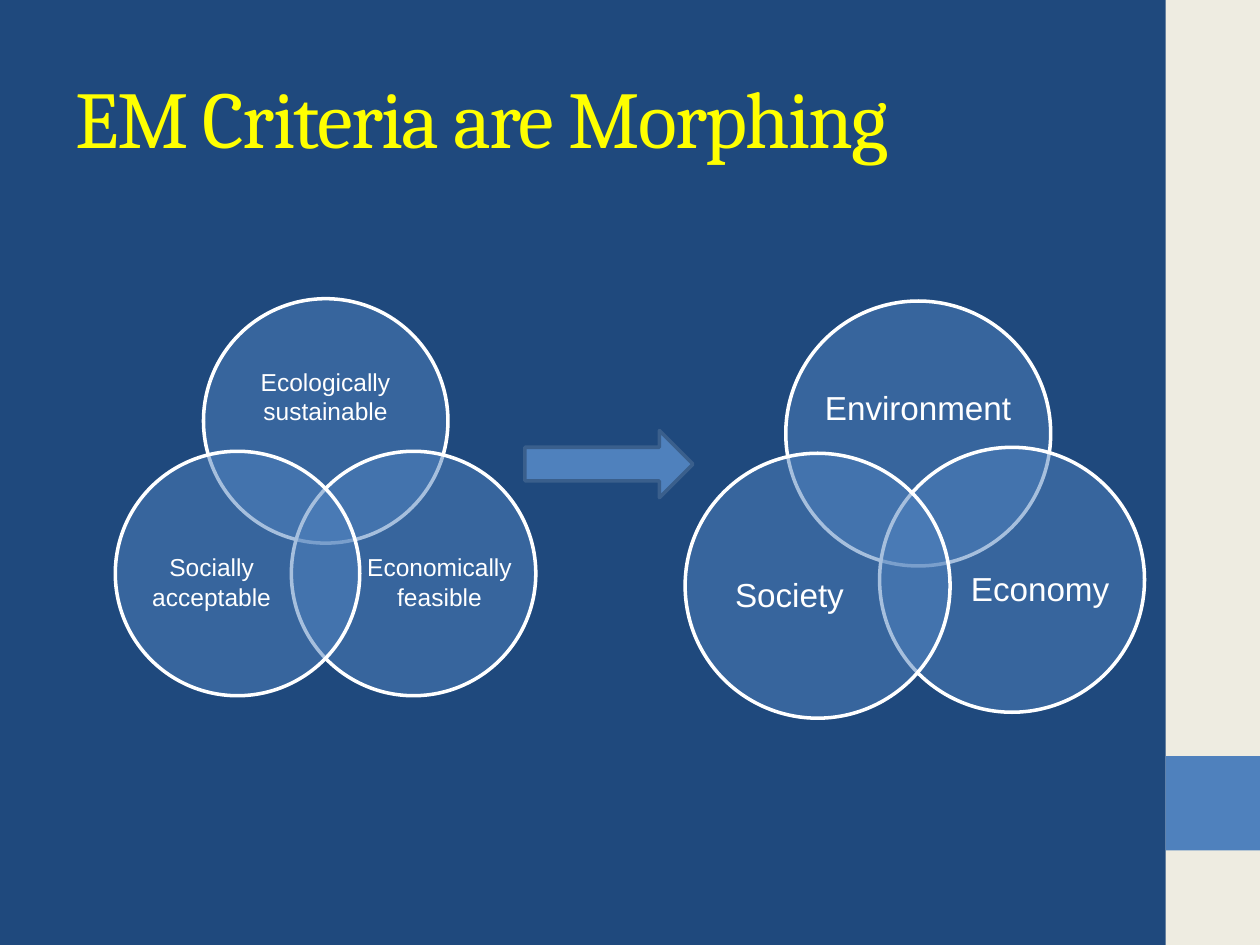
from dataclasses import dataclass

from lxml import etree
from pptx import Presentation
from pptx.dml.color import RGBColor
from pptx.enum.shapes import MSO_SHAPE
from pptx.enum.text import MSO_ANCHOR, MSO_AUTO_SIZE, PP_ALIGN
from pptx.oxml.ns import qn
from pptx.util import Pt

RECT, OVAL, ARROW = MSO_SHAPE.RECTANGLE, MSO_SHAPE.OVAL, MSO_SHAPE.RIGHT_ARROW
MIDDLE, NO_FIT = MSO_ANCHOR.MIDDLE, MSO_AUTO_SIZE.NONE
LEFT, CENTER = PP_ALIGN.LEFT, PP_ALIGN.CENTER

COLORS = {
    "back": "1F497D",
    "band": "EEECE1",
    "blue": "4F81BD",
    "edge": "3A5F8C",
    "title": "FFFF00",
    "white": "FFFFFF",
}


@dataclass
class Ring:
    text: str
    left: float
    top: float
    label: tuple[float, float, float, float]  # box as shares of the diameter


@dataclass
class Venn:
    size: float
    font: float
    rings: list[Ring]


TOP = (0.133, 0.175, 0.733, 0.45)
RIGHT = (0.306, 0.258, 0.6, 0.55)
SIDE = (0.094, 0.258, 0.6, 0.55)

VENNS = [
    Venn(139.7, 14, [
        Ring("Ecologically sustainable", 116.3, 170.7, TOP),
        Ring("Economically\nfeasible", 166.5, 257.9, RIGHT),
        Ring("Socially acceptable", 65.9, 257.9, SIDE),
    ]),
    Venn(151.4, 19, [
        Ring("Environment", 449, 172, TOP),
        Ring("Economy", 502.6, 255.6, RIGHT),
        Ring("Society", 391.5, 259, SIDE),
    ]),
]


def color(name: str) -> RGBColor:
    return RGBColor.from_string(COLORS[name])


def add_form(shapes, kind, box: tuple, fill: str, edge: str | None = None):
    form = shapes.add_shape(kind, *map(Pt, box))
    form.shadow.inherit = False
    form.fill.solid()
    form.fill.fore_color.rgb = color(fill)
    if edge:
        form.line.color.rgb = color(edge)
        form.line.width = Pt(2)
    else:
        form.line.fill.background()
    return form


def set_alpha(form, percent: int) -> None:
    tone = form.fill._xPr.find(qn("a:solidFill"))[0]
    etree.SubElement(tone, qn("a:alpha"), val=str(percent * 1000))


def add_label(shapes, text: str, box: tuple, size: float) -> None:
    frame = shapes.add_textbox(*map(Pt, box)).text_frame
    frame.word_wrap = True
    frame.vertical_anchor = MIDDLE
    frame.margin_left = frame.margin_right = 0
    frame.margin_top = frame.margin_bottom = 0
    frame.text = text
    for line in frame.paragraphs:
        line.alignment = CENTER
        line.font.name = "Arial"
        line.font.size = Pt(size)
        line.font.color.rgb = color("white")


def add_venn(slide, venn: Venn) -> None:
    group = slide.shapes.add_group_shape().shapes
    size = venn.size
    for ring in venn.rings:
        disc = add_form(group, OVAL, (ring.left, ring.top, size, size), "blue", "white")
        set_alpha(disc, 50)
        x, y, wide, high = (share * size for share in ring.label)
        add_label(group, ring.text, (ring.left + x, ring.top + y, wide, high), venn.font)


def set_title(slide, text: str) -> None:
    title = slide.shapes.title
    title.left, title.top, title.width, title.height = map(Pt, (36, 21.6, 600, 90))
    frame = title.text_frame
    frame.text = text
    frame.auto_size = NO_FIT
    frame.vertical_anchor = MIDDLE
    line = frame.paragraphs[0]
    line.alignment = LEFT
    line.font.name = "Cambria"
    line.font.size = Pt(46)
    line.font.color.rgb = color("title")
    line.runs[0].font._element.set("spc", "-100")


def main() -> None:
    deck = Presentation()
    deck.slide_width, deck.slide_height = Pt(720), Pt(540)
    slide = deck.slides.add_slide(deck.slide_layouts[5])
    slide.background.fill.solid()
    slide.background.fill.fore_color.rgb = color("back")

    add_form(slide.shapes, RECT, (666, 0, 54, 540), "band")
    add_form(slide.shapes, RECT, (666, 432, 54, 54), "blue")
    set_title(slide, "EM Criteria are Morphing")
    for venn in VENNS:
        add_venn(slide, venn)
    add_form(slide.shapes, ARROW, (300, 246, 96, 38.4), "blue", "edge")
    deck.save("out.pptx")


if __name__ == "__main__":
    main()
